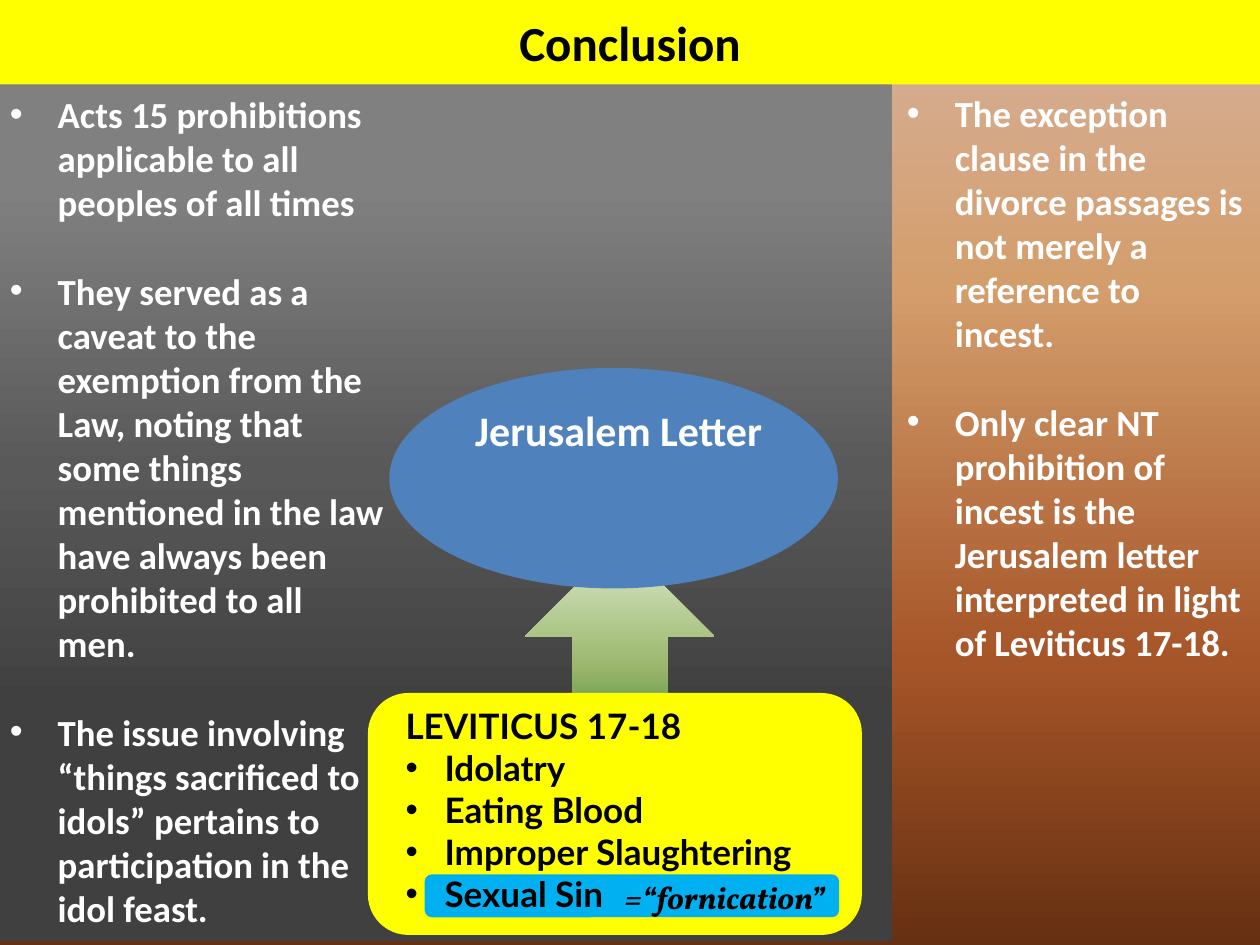
from collections import namedtuple

from lxml.etree import SubElement
from pptx import Presentation
from pptx.dml.color import RGBColor
from pptx.enum.shapes import MSO_SHAPE as Shape
from pptx.enum.text import MSO_ANCHOR as Anchor, MSO_AUTO_SIZE as Fit, PP_ALIGN as Align
from pptx.oxml.ns import qn
from pptx.util import Inches, Pt

UNIT = 0.1  # inches in one grid column or row
COLUMNS, ROWS = 100, 75
TITLE_ROWS = 6.7
WHITE, BLACK, YELLOW = "FFFFFF", "000000", "FFFF00"

PAGE_STOPS = [(0, "D6B19C"), (30, "D49E6C"), (70, "A65528"), (100, "663012")]
PANEL_STOPS = [(0, "808080"), (20, "808080"), (50, "595959"), (75, "404040")]
ARROW_STOPS = [(0, "DDEBCF"), (50, "9CB86E"), (100, "156B13")]

LEFT_POINTS = [
    "Acts 15 prohibitions applicable to all peoples of all times",
    "They served as a caveat to the exemption from the Law, noting that some things "
    "mentioned in the law have always been prohibited to all men.",
    "The issue involving “things sacrificed to idols” pertains to participation in the idol feast.",
]
RIGHT_POINTS = [
    "The exception clause in the divorce passages is not merely a reference to incest.",
    "Only clear NT prohibition of incest is the Jerusalem letter interpreted in light "
    "of Leviticus 17-18.",
]
LAWS = ["Idolatry", "Eating Blood", "Improper Slaughtering", "Sexual Sin"]

# An area in grid columns and rows
Box = namedtuple("Box", "left top width height")


def inside(box, left, top, width, height):
    """An area placed from the top left corner of another one."""
    return Box(box.left + left, box.top + top, width, height)


def lengths(box):
    return [Inches(value * UNIT) for value in box]


def color(value):
    return RGBColor.from_string(value)


def set_gradient(fill, element, stops):
    """Fill from top to bottom with any number of (percent, colour) stops."""
    fill.gradient()
    fill.gradient_angle = 270
    stop_list = next(element.iter(qn("a:gsLst")))
    for stop in list(stop_list):
        stop_list.remove(stop)
    for percent, value in stops:
        stop = SubElement(stop_list, qn("a:gs"), pos=str(percent * 1000))
        SubElement(stop, qn("a:srgbClr"), val=value)


def add_shape(page, kind, box, fill):
    shape = page.shapes.add_shape(kind, *lengths(box))
    shape.shadow.inherit = False
    shape.line.fill.background()
    if isinstance(fill, str):
        shape.fill.solid()
        shape.fill.fore_color.rgb = color(fill)
    else:
        set_gradient(shape.fill, shape.element.spPr, fill)
    return shape


def add_bullet(para, indent):
    props = para._p.get_or_add_pPr()
    props.set("marL", str(Inches(indent)))
    props.set("indent", str(-Inches(indent)))
    SubElement(props, qn("a:buFont"), typeface="Arial")
    SubElement(props, qn("a:buChar"), char="•")


def write(frame, lines, font="Calibri", size=21, fill=WHITE, italic=False,
          align=Align.LEFT, indent=0, plain=0, gap=0):
    """Write bold lines; those after the first `plain` ones get bullets if indented."""
    for index, line in enumerate(lines):
        para = frame.paragraphs[0] if index == 0 else frame.add_paragraph()
        para.alignment = align
        if gap and index:
            para.space_before = Pt(gap)
        if indent and index >= plain:
            add_bullet(para, indent)
        span = para.add_run()
        span.text = line
        span.font.name, span.font.size = font, Pt(size)
        span.font.bold, span.font.italic = True, italic
        span.font.color.rgb = color(fill)


def add_text(page, box, lines, wrap=True, **style):
    frame = page.shapes.add_textbox(*lengths(box)).text_frame
    frame.word_wrap = wrap
    frame.auto_size = Fit.SHAPE_TO_FIT_TEXT
    write(frame, lines, **style)


def add_title(page, box):
    frame = add_shape(page, Shape.RECTANGLE, box, YELLOW).text_frame
    frame.vertical_anchor = Anchor.MIDDLE
    write(frame, ["Conclusion"], size=28, fill=BLACK, align=Align.CENTER)


def add_points(page, box, points):
    add_text(page, box, points, indent=0.38, gap=25.2)


def add_letter(page, box):
    """Arrow rising from the source text into the letter's ellipse."""
    add_shape(page, Shape.UP_ARROW, inside(box, 12.5, 13.8, 15, 19.5), ARROW_STOPS)
    add_shape(page, Shape.OVAL, inside(box, 1.7, 0, 35.6, 17.5), "4F81BD")
    add_text(page, inside(box, 5.8, 2.4, 28.2, 5), ["Jerusalem Letter"],
             size=24, align=Align.CENTER)


def add_laws(page, box):
    """Card of laws, the last of them highlighted."""
    add_shape(page, Shape.ROUNDED_RECTANGLE, box, YELLOW)
    add_shape(page, Shape.ROUNDED_RECTANGLE, inside(box, 4.5, 14.4, 32.9, 3.4), "00B0F0")
    add_text(page, inside(box, 2, 0.4, 35.1, 17.8), ["LEVITICUS 17-18"] + LAWS,
             font="Lato", size=20, fill=BLACK, indent=0.31, plain=1)
    add_text(page, inside(box, 19.4, 14.2, 18.4, 4), ["=“fornication”"], wrap=False,
             font="Vollkorn", size=18, fill=BLACK, italic=True)


def main():
    deck = Presentation()
    deck.slide_width, deck.slide_height = Inches(COLUMNS * UNIT), Inches(ROWS * UNIT)
    page = deck.slides.add_slide(deck.slide_layouts[6])
    set_gradient(page.background.fill, page.element, PAGE_STOPS)

    # Grey panel and diagram
    add_shape(page, Shape.RECTANGLE, Box(0, 0, 70.8, 74.7), PANEL_STOPS)
    add_letter(page, Box(29.2, 29.2, 39.2, 33.3))
    add_laws(page, Box(29.2, 55, 39.2, 19.2))

    # Title band and side lists
    add_title(page, Box(0, 0, COLUMNS, TITLE_ROWS))
    add_points(page, Box(71, TITLE_ROWS, 29, 47), RIGHT_POINTS)
    add_points(page, Box(-0.2, TITLE_ROWS + 0.1, 31.9, 68.2), LEFT_POINTS)

    deck.save("out.pptx")


if __name__ == "__main__":
    main()
